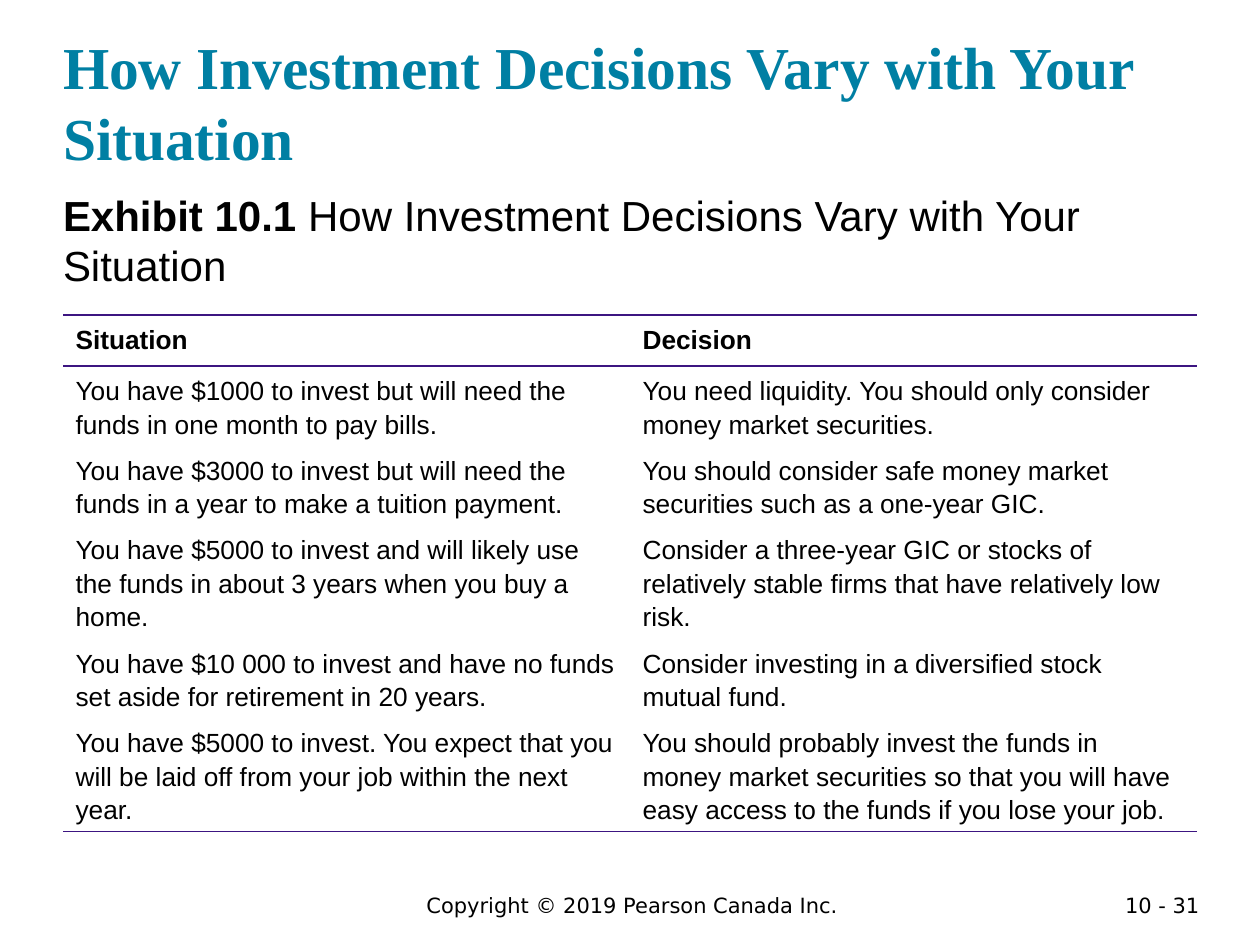
from lxml import etree
from pptx import Presentation
from pptx.dml.color import RGBColor
from pptx.enum.text import MSO_ANCHOR, MSO_AUTO_SIZE, PP_ALIGN
from pptx.oxml.ns import qn
from pptx.util import Cm, Pt

LEFT, CENTER, RIGHT = PP_ALIGN.LEFT, PP_ALIGN.CENTER, PP_ALIGN.RIGHT
TOP, BOTTOM = MSO_ANCHOR.TOP, MSO_ANCHOR.BOTTOM
NO_AUTOFIT = MSO_AUTO_SIZE.NONE

COLORS = {"title": "007FA3", "text": "000000", "rule": "3C1581"}
FONTS = {"title": "Times New Roman", "body": "Arial", "footer": "DejaVu Sans"}
MARGIN, CONTENT_WIDTH = 1.27, 22.86

HEADERS = ("Situation", "Decision")
DECISIONS = [
    ("You have $1000 to invest but will need the funds in one month to pay bills.",
     "You need liquidity. You should only consider money market securities."),
    ("You have $3000 to invest but will need the funds in a year to make a tuition payment.",
     "You should consider safe money market securities such as a one-year GIC."),
    ("You have $5000 to invest and will likely use the funds in about 3 years when you buy a home.",
     "Consider a three-year GIC or stocks of relatively stable firms that have relatively low risk."),
    ("You have $10 000 to invest and have no funds set aside for retirement in 20 years.",
     "Consider investing in a diversified stock mutual fund."),
    ("You have $5000 to invest. You expect that you will be laid off from your job within the next year.",
     "You should probably invest the funds in money market securities so that you will have "
     "easy access to the funds if you lose your job."),
]


class SlideBuilder:
    """Holds the current slide and the shared text style."""

    def __init__(self, slide):
        self.slide = slide

    def add_run(self, para, text, size, font="body", color="text", bold=False):
        span = para.add_run()
        span.text = text
        span.font.name = FONTS[font]
        span.font.size = Pt(size)
        span.font.bold = bold
        span.font.color.rgb = RGBColor.from_string(COLORS[color])

    def place(self, box, left, top, width, height):
        box.left, box.top = Cm(left), Cm(top)
        box.width, box.height = Cm(width), Cm(height)

    def placeholder(self, index, top, height, anchor):
        """Move a template placeholder and return its first paragraph."""
        box = self.slide.placeholders[index]
        self.place(box, MARGIN, top, CONTENT_WIDTH, height)
        frame = box.text_frame
        frame.margin_left = frame.margin_right = 0
        frame.margin_top = frame.margin_bottom = 0
        frame.auto_size = NO_AUTOFIT
        frame.word_wrap = True
        frame.vertical_anchor = anchor
        para = frame.paragraphs[0]
        para.alignment = LEFT
        para.space_before = Pt(0)
        return para

    def title(self, text):
        para = self.placeholder(0, 0.43, 3.05, BOTTOM)
        self.add_run(para, text, 34, "title", "title", bold=True)

    def caption(self, label, text):
        para = self.placeholder(1, 3.81, 2.54, TOP)
        properties = para._p.get_or_add_pPr()
        properties.set("marL", "0")
        properties.set("indent", "0")
        etree.SubElement(properties, qn("a:buNone"))
        self.add_run(para, label, 24, bold=True)
        self.add_run(para, text, 24)

    def footer(self, text, left, width, height, alignment):
        box = self.slide.shapes.add_textbox(Cm(left), Cm(17.86), Cm(width), Cm(height))
        box.text_frame.word_wrap = True
        para = box.text_frame.paragraphs[0]
        para.alignment = alignment
        self.add_run(para, text, 12, "footer")

    def borders(self, cell, ruled):
        """Draw the ruled edges and clear all others."""
        properties = cell._tc.get_or_add_tcPr()
        for position, edge in enumerate(("lnL", "lnR", "lnT", "lnB")):
            line = etree.Element(qn(f"a:{edge}"), w=str(Pt(1)))
            if edge in ruled:
                fill = etree.SubElement(line, qn("a:solidFill"))
                etree.SubElement(fill, qn("a:srgbClr"), val=COLORS["rule"])
            else:
                etree.SubElement(line, qn("a:noFill"))
            properties.insert(position, line)

    def table(self, headers, records, top, row_height):
        rows = [headers, *records]
        frame = self.slide.shapes.add_table(
            len(rows), len(headers), Cm(MARGIN), Cm(top),
            Cm(CONTENT_WIDTH), Cm(row_height * len(rows)))
        table = frame.table
        table.horz_banding = False
        for row_index, texts in enumerate(rows):
            is_header = row_index == 0
            ruled = {0: ("lnT", "lnB"), 1: ("lnT",), len(rows) - 1: ("lnB",)}.get(row_index, ())
            for column_index, text in enumerate(texts):
                cell = table.cell(row_index, column_index)
                cell.fill.background()
                self.borders(cell, ruled)
                para = cell.text_frame.paragraphs[0]
                para.line_spacing = 1.15
                self.add_run(para, text, 15, bold=is_header)


def main():
    deck = Presentation()
    deck.slide_width, deck.slide_height = Cm(25.4), Cm(19.05)
    page = SlideBuilder(deck.slides.add_slide(deck.slide_layouts[1]))

    # Heading and exhibit caption
    heading = "How Investment Decisions Vary with Your Situation"
    page.title(heading)
    page.caption("Exhibit 10.1 ", heading)

    # Situations and decisions
    page.table(HEADERS, DECISIONS, top=6.35, row_height=1.03)

    # Footer line
    page.footer("Copyright © 2019 Pearson Canada Inc.", 4.17, 17.15, 0.76, CENTER)
    page.footer("10 - 31", 21.89, 2.54, 0.56, RIGHT)

    deck.save("out.pptx")


if __name__ == "__main__":
    main()
